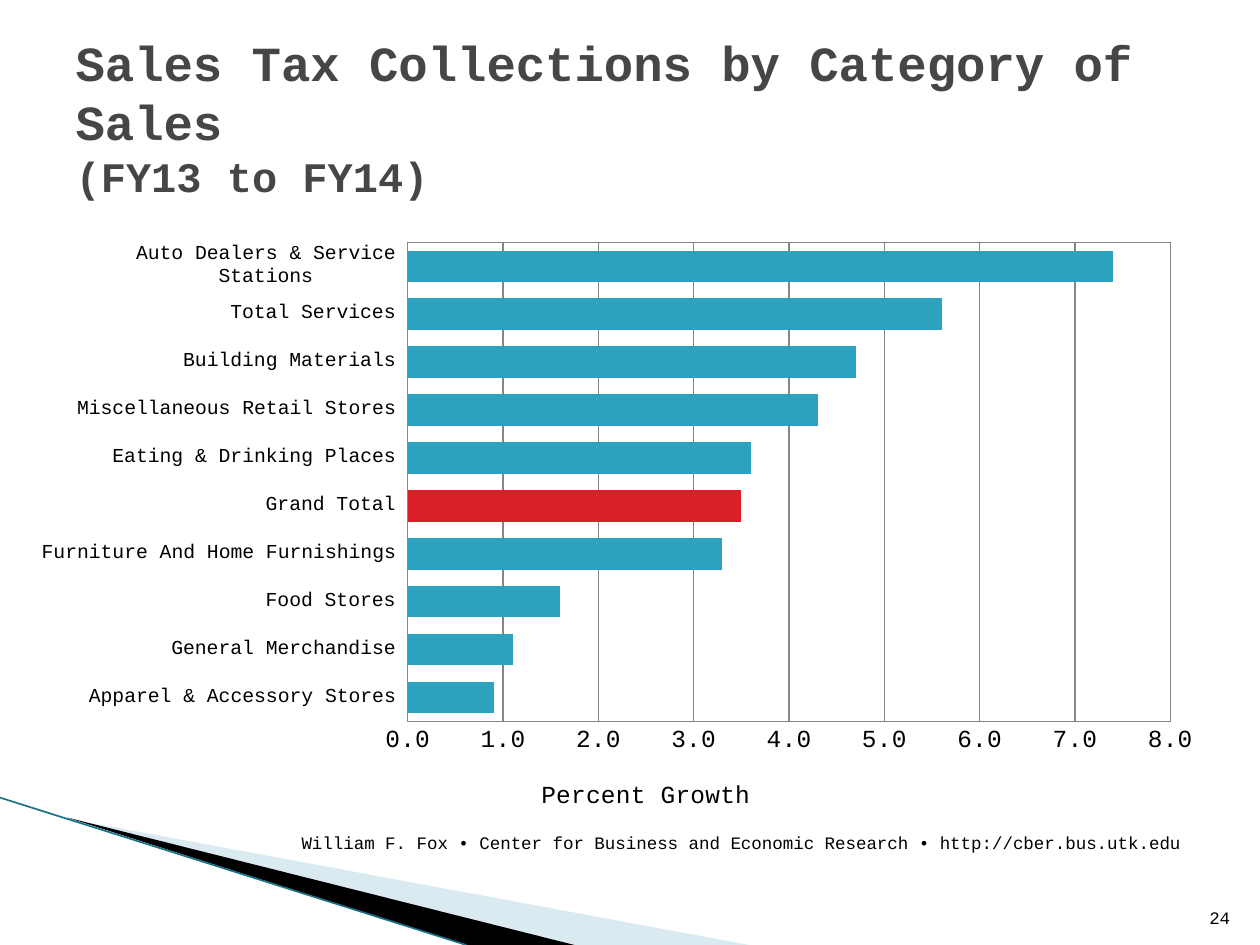
from lxml import etree
from pptx import Presentation
from pptx.chart.data import CategoryChartData
from pptx.dml.color import RGBColor
from pptx.enum.chart import XL_CHART_TYPE as ChartType
from pptx.enum.chart import XL_TICK_LABEL_POSITION as LabelPosition
from pptx.enum.chart import XL_TICK_MARK as TickMark
from pptx.enum.shapes import MSO_CONNECTOR as Connector
from pptx.enum.text import MSO_ANCHOR as Anchor
from pptx.enum.text import MSO_AUTO_SIZE as AutoSize
from pptx.enum.text import PP_ALIGN as Align
from pptx.oxml import parse_xml
from pptx.oxml.ns import qn
from pptx.util import Cm, Pt

FONT = "Courier New"
COLORS = {
    "title": "464646", "text": "000000", "bar": "2DA2BF", "total": "DA1F28",
    "grid": "868686", "pale": "A0CBDC", "dark": "000000", "edge": "1B7288",
}
TITLE = [("Sales Tax Collections by Category of Sales", 28), ("(FY13 to FY14)", 24)]
GROWTH = [
    ("Apparel & Accessory Stores", 0.9),
    ("General Merchandise", 1.1),
    ("Food Stores", 1.6),
    ("Furniture And Home Furnishings", 3.3),
    ("Grand Total", 3.5),
    ("Eating & Drinking Places", 3.6),
    ("Miscellaneous Retail Stores", 4.3),
    ("Building Materials", 4.7),
    ("Total Services", 5.6),
    ("Auto Dealers & Service Stations", 7.4),
]
HIGHLIGHT = "Grand Total"
# text, alignment, (left, top, width, height) in cm
NOTES = [
    ("William F. Fox • Center for Business and Economic Research • http://cber.bus.utk.edu",
     Align.CENTER, (5.51, 16.31, 18.85, 1.02)),
    ("24", Align.RIGHT, (24.03, 17.81, 1.02, 1.02)),
]
# fill, opacity in percent, corner points in cm
WEDGES = [
    ("pale", 40, [(1.4, 16.51), (15.1, 19.05), (11.58, 19.05)]),
    ("dark", 100, [(1.35, 16.48), (11.58, 19.05), (9.4, 19.05)]),
]
EDGE = [(0, 16.08), (9.4, 19.05)]


def color(name):
    return RGBColor.from_string(COLORS[name])


def style_font(font, size, name="text", bold=False):
    font.name, font.size, font.bold = FONT, Pt(size), bold
    font.color.rgb = color(name)


def set_line(line, name, width=0.75):
    line.color.rgb = color(name)
    line.width = Pt(width)


def draw_wedge(slide, fill, opacity, corners):
    start, *others = [(Cm(x), Cm(y)) for x, y in corners]
    builder = slide.shapes.build_freeform(*start)
    builder.add_line_segments(others, close=True)
    wedge = builder.convert_to_shape()
    wedge.shadow.inherit = False
    wedge.fill.solid()
    wedge.fill.fore_color.rgb = color(fill)
    wedge.line.fill.background()
    if opacity < 100:
        rgb = wedge.fill._xPr.find(qn("a:solidFill"))[0]
        etree.SubElement(rgb, qn("a:alpha")).set("val", str(opacity * 1000))


def draw_edge(slide):
    ends = [Cm(value) for point in EDGE for value in point]
    edge = slide.shapes.add_connector(Connector.STRAIGHT, *ends)
    set_line(edge.line, "edge", 0.95)
    etree.SubElement(edge._element.spPr, qn("a:effectLst"))


def layout_xml(x, y, width=None, height=None):
    """Manual chart layout, in fractions of the chart; a size marks the inner plot."""
    values = [("xMode", "edge"), ("yMode", "edge"), ("x", x), ("y", y)]
    if width:
        values = [("layoutTarget", "inner"), *values, ("w", width), ("h", height)]
    parts = "".join(f'<c:{tag} val="{value}"/>' for tag, value in values)
    return parse_xml(
        '<c:layout xmlns:c="http://schemas.openxmlformats.org/drawingml/2006/chart">'
        f"<c:manualLayout>{parts}</c:manualLayout></c:layout>")


def replace_layout(parent, layout, index):
    old = parent.find(qn("c:layout"))
    if old is not None:
        parent.remove(old)
    parent.insert(index, layout)


def draw_chart(slide):
    names, values = zip(*GROWTH)
    data = CategoryChartData(number_format="0.0")
    data.categories = names
    data.add_series("Series 1", values)
    chart = slide.shapes.add_chart(
        ChartType.BAR_CLUSTERED, Cm(0.84), Cm(4.65), Cm(23.7), Cm(12.07), data).chart
    chart.has_legend = chart.has_title = False
    style_font(chart.font, 14)

    plot = chart.plots[0]
    plot.gap_width, plot.overlap = 51, 10
    plot.vary_by_categories = False
    series = plot.series[0]
    bars = [(series, "bar"), (series.points[names.index(HIGHLIGHT)], "total")]
    for bar, name in bars:
        bar.format.fill.solid()
        bar.format.fill.fore_color.rgb = color(name)

    categories, growth = chart.category_axis, chart.value_axis
    for axis, size in ((categories, 11.3), (growth, 14)):
        axis.major_tick_mark = axis.minor_tick_mark = TickMark.NONE
        set_line(axis.format.line, "grid")
        style_font(axis.tick_labels.font, size)
    categories.tick_label_position = LabelPosition.LOW
    categories.has_major_gridlines = False
    growth.minimum_scale, growth.maximum_scale, growth.major_unit = 0, 8, 1
    growth.tick_labels.number_format = "#,##0.0"
    growth.tick_labels.number_format_is_linked = False
    growth.has_major_gridlines = True
    set_line(growth.major_gridlines.format.line, "grid")

    para = growth.axis_title.text_frame.paragraphs[0]
    para.text = "Percent Growth"
    style_font(para.font, 14)
    replace_layout(growth.axis_title._element, layout_xml(0.42, 0.91), 1)

    area = chart._chartSpace.chart.plotArea
    replace_layout(area, layout_xml(0.31, 0.02, 0.65, 0.8), 0)
    area.append(parse_xml(
        '<c:spPr xmlns:c="http://schemas.openxmlformats.org/drawingml/2006/chart" '
        'xmlns:a="http://schemas.openxmlformats.org/drawingml/2006/main"><a:noFill/>'
        f'<a:ln w="9525"><a:solidFill><a:srgbClr val="{COLORS["grid"]}"/></a:solidFill>'
        "</a:ln></c:spPr>"))


def draw_note(slide, text, align, place):
    frame = slide.shapes.add_textbox(*map(Cm, place)).text_frame
    frame.word_wrap = True
    frame.vertical_anchor = Anchor.BOTTOM
    para = frame.paragraphs[0]
    para.text, para.alignment = text, align
    style_font(para.font, 10)


def fill_title(title):
    title.left, title.top, title.width, title.height = map(Cm, (1.27, 0.76, 22.86, 3.18))
    frame = title.text_frame
    frame.word_wrap = True
    frame.auto_size = AutoSize.NONE
    frame.vertical_anchor = Anchor.MIDDLE
    para = frame.paragraphs[0]
    para.alignment = Align.LEFT
    for index, (text, size) in enumerate(TITLE):
        if index:
            para.add_line_break()
        span = para.add_run()
        span.text = text
        style_font(span.font, size, "title", bold=True)


def main():
    deck = Presentation()
    deck.slide_width, deck.slide_height = Cm(25.4), Cm(19.05)
    slide = deck.slides.add_slide(deck.slide_layouts[5])
    for wedge in WEDGES:
        draw_wedge(slide, *wedge)
    draw_edge(slide)
    draw_chart(slide)
    for note in NOTES:
        draw_note(slide, *note)
    fill_title(slide.shapes.title)
    deck.save("out.pptx")


if __name__ == "__main__":
    main()
